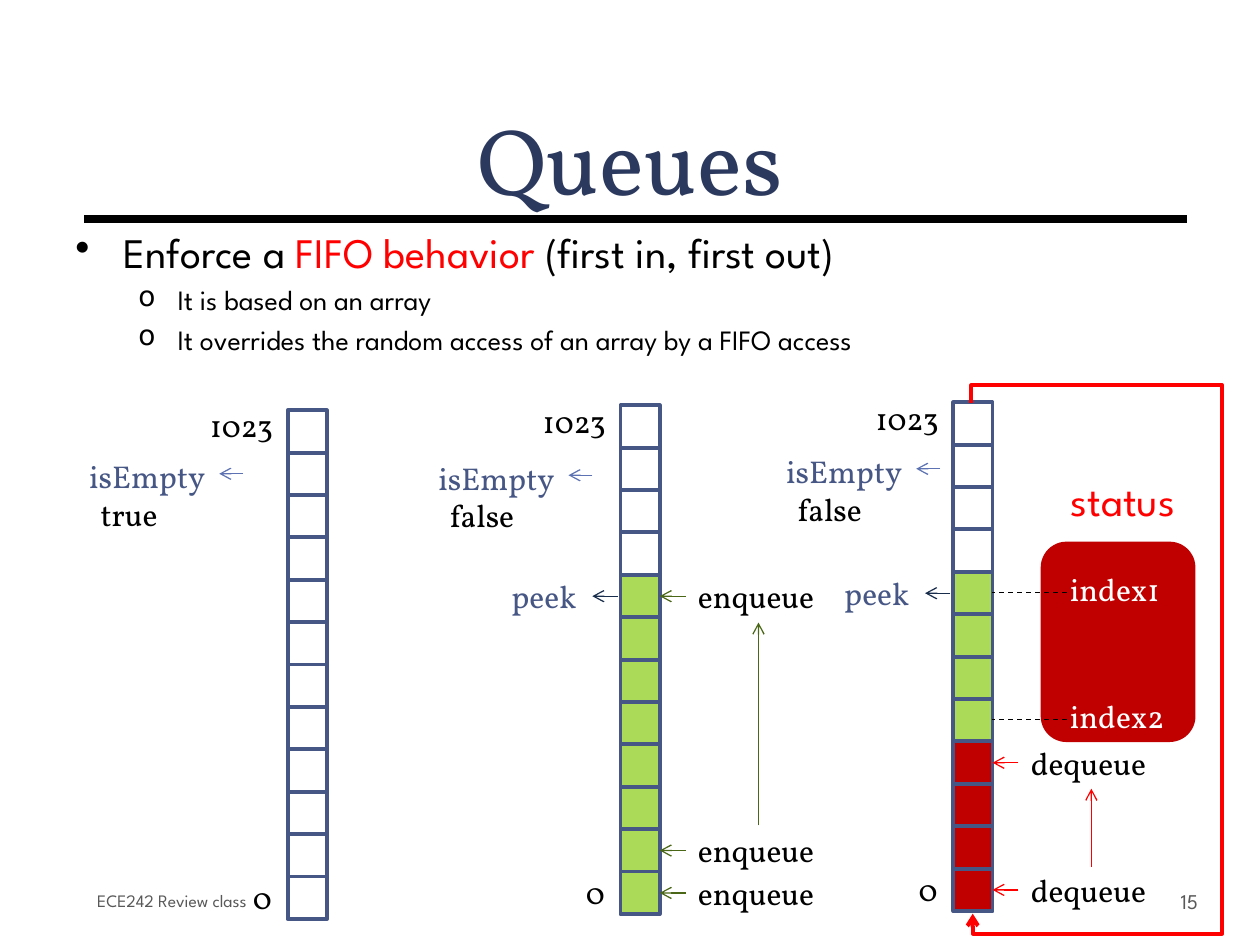
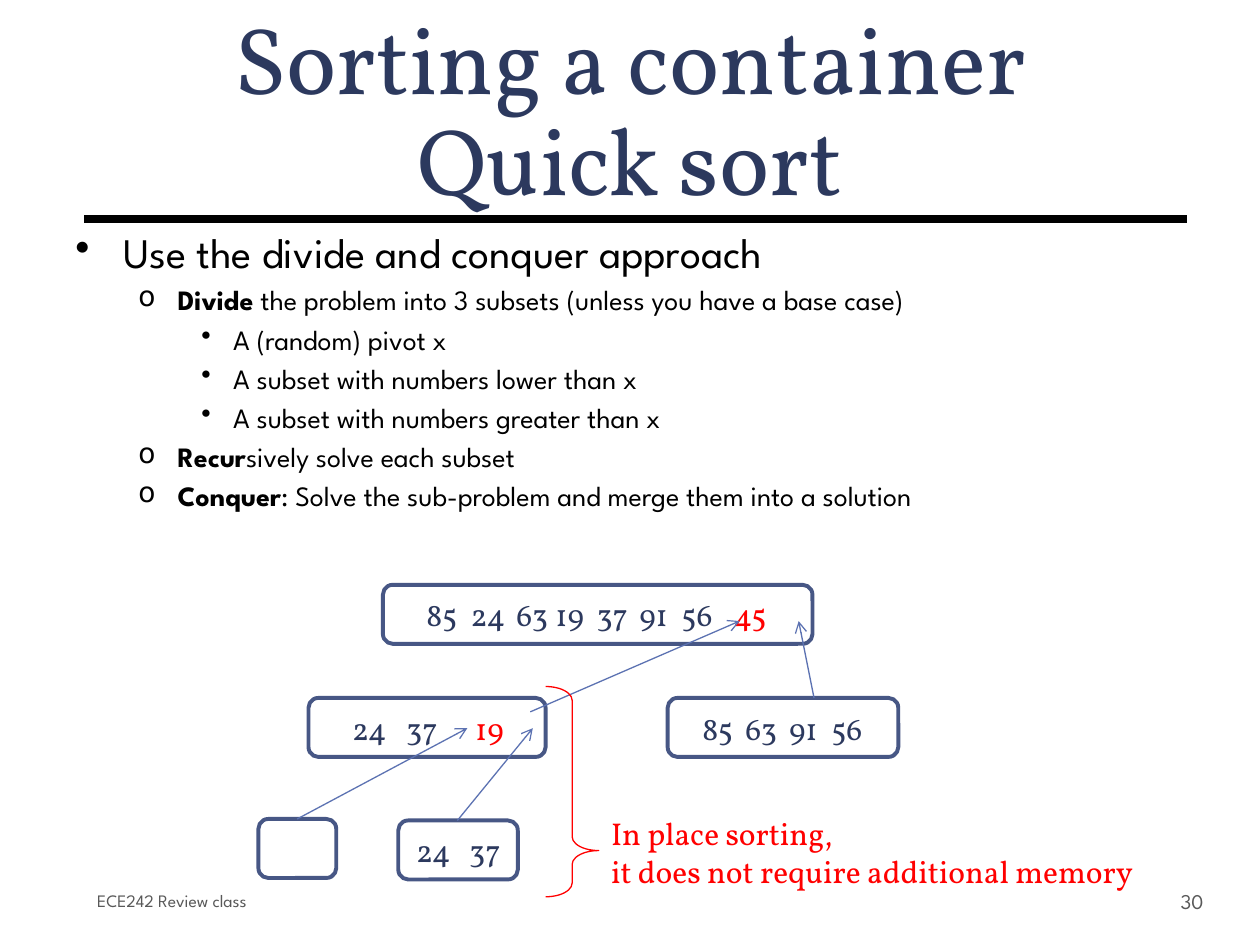
import pptx
import pptx.util
import pptx.dml.color
import pptx.enum.dml
import pptx.enum.shapes
import pptx.enum.text
import pptx.oxml.ns
import lxml.etree

Cm = pptx.util.Cm
Pt = pptx.util.Pt
KIND = pptx.enum.shapes.MSO_SHAPE
ANCHOR = pptx.enum.text.MSO_ANCHOR
FIT = pptx.enum.text.MSO_AUTO_SIZE

SERIF, SANS = "Vollkorn", "League Spartan"
BLACK, WHITE, GREY = "000000", "FFFFFF", "595959"
NAVY, BLUE, SKY, DARK = "2C395E", "475785", "5C72B2", "182C4B"
RED, WINE, GREEN, OLIVE = "FF0000", "C00000", "ABD958", "4A6717"

# Bullet levels: left indent, hanging indent, sign, text size
LEVELS = [(0.97, 0.97, "•", 24), (2.06, 0.79, "o", 16), (3.18, 0.64, "•", 16)]

# Queue columns: cell size and the span from first to last row
CELL_W, CELL_H, SPAN, ROWS = 0.79, 0.86, 9.4, 12


def color(code):
    return pptx.dml.color.RGBColor.from_string(code)


def child(node, tag, **attrs):
    return lxml.etree.SubElement(node, pptx.oxml.ns.qn(tag), attrs)


def row_y(top, row):
    return top + row * SPAN / (ROWS - 1)


class Deck:
    def __init__(self):
        self.prs = pptx.Presentation()
        self.prs.slide_width, self.prs.slide_height = Cm(25.4), Cm(19.05)
        self.slide = None

    def start(self, title, number):
        """Add a slide with the shared title, rule and footer."""
        self.slide = self.prs.slides.add_slide(self.prs.slide_layouts[5])
        self.line(1.7, 4.42, 23.93, 4.42, BLACK, 4.5, head=False)
        box = self.slide.shapes.title
        box.left, box.top, box.width, box.height = Cm(1.27), Cm(0), Cm(22.86), Cm(4.45)
        frame = box.text_frame
        frame.text = title
        frame.auto_size = FIT.NONE
        frame.vertical_anchor = ANCHOR.BOTTOM
        para = frame.paragraphs[0]
        para.alignment = pptx.enum.text.PP_ALIGN.CENTER
        para.line_spacing = Pt(58)
        for run in para.runs:
            self.style(run, 54, SERIF, NAVY)
        self.foot(23.72, 1.55, 0.08, str(number), 12)
        self.foot(1.83, 7.9, 0.13, "ECE242 Review class", 10)

    def foot(self, x, wide, inset, words, size):
        frame = self.text(x, 17.65, wide, 1.02, [[words]], size, SANS, GREY, wrap=True)
        frame.auto_size = FIT.NONE
        frame.vertical_anchor = ANCHOR.MIDDLE
        frame.margin_left = Cm(inset)

    def style(self, run, size, face, hue, bold=False):
        font = run.font
        font.size, font.name, font.bold = Pt(size), face, bold
        font.color.rgb = color(hue)

    def fill(self, para, parts, size, face, hue):
        """Write parts: plain strings or (string, colour, bold)."""
        for part in parts:
            words, tint, bold = (part, hue, False) if isinstance(part, str) else part
            run = para.add_run()
            run.text = words
            self.style(run, size, face, tint, bold)

    def text(self, x, y, wide, high, lines, size=18, face=SERIF, hue=BLACK, wrap=False):
        box = self.slide.shapes.add_textbox(Cm(x), Cm(y), Cm(wide), Cm(high))
        frame = box.text_frame
        frame.word_wrap = wrap
        frame.auto_size = FIT.SHAPE_TO_FIT_TEXT
        for i, parts in enumerate(lines):
            para = frame.add_paragraph() if i else frame.paragraphs[0]
            self.fill(para, parts, size, face, hue)
        return frame

    def bullets(self, items):
        frame = self.text(1.27, 4.45, 22.86, 12.57, [], wrap=True)
        frame.auto_size = FIT.NONE
        for i, (level, *parts) in enumerate(items):
            left, hang, sign, size = LEVELS[level]
            para = frame.add_paragraph() if i else frame.paragraphs[0]
            para.level = level
            props = para._p.get_or_add_pPr()
            props.set("marL", str(Cm(left)))
            props.set("indent", str(-Cm(hang)))
            child(child(props, "a:spcBef"), "a:spcPct", val="20000")
            child(props, "a:buChar", char=sign)
            self.fill(para, parts, size, SANS, BLACK)

    def shape(self, kind, x, y, wide, high, fill=None, edge=None, weight=2.25):
        item = self.slide.shapes.add_shape(kind, Cm(x), Cm(y), Cm(wide), Cm(high))
        self.paint(item, fill, edge, weight)
        return item

    def paint(self, item, fill, edge, weight):
        item.shadow.inherit = False
        if fill:
            item.fill.solid()
            item.fill.fore_color.rgb = color(fill)
        else:
            item.fill.background()
        if edge:
            item.line.color.rgb = color(edge)
            item.line.width = Pt(weight)
        else:
            item.line.fill.background()

    def tip(self, item):
        child(item.line._get_or_add_ln(), "a:tailEnd", type="arrow")

    def line(self, x1, y1, x2, y2, hue, weight=0.75, head=True, dash=False):
        item = self.slide.shapes.add_connector(
            pptx.enum.shapes.MSO_CONNECTOR.STRAIGHT, Cm(x1), Cm(y1), Cm(x2), Cm(y2))
        item.line.color.rgb = color(hue)
        item.line.width = Pt(weight)
        if dash:
            item.line.dash_style = pptx.enum.dml.MSO_LINE.DASH
        if head:
            self.tip(item)
        child(item._element.spPr, "a:effectLst")

    def route(self, points, hue):
        """Draw an open path that ends in an arrow."""
        spots = [(Cm(x), Cm(y)) for x, y in points]
        path = self.slide.shapes.build_freeform(*spots[0])
        path.add_line_segments(spots[1:], close=False)
        item = path.convert_to_shape()
        self.paint(item, None, hue, 2.25)
        self.tip(item)

    def column(self, x, y, fills):
        for row, fill in enumerate(fills):
            self.shape(KIND.RECTANGLE, x, row_y(y, row), CELL_W, CELL_H, fill, BLUE)
        self.text(x - 0.95, y + 9.31, 0.84, 1.02, [["0"]])
        self.text(x - 1.82, y - 0.2, 1.8, 1.02, [["1023"]])

    def entry(self, x, top, row, word, hue):
        """Label a cell from the right."""
        y = row_y(top, row)
        self.text(x + 1.31, y - 0.08, 2.95, 1.02, [[word]])
        self.line(x + 1.31, y + CELL_H / 2, x + CELL_W, y + CELL_H / 2, hue)

    def peek(self, x, top, row):
        y = row_y(top, row)
        self.text(x - 2.45, y - 0.08, 1.88, 1.02, [["peek"]], hue=BLUE)
        self.line(x - 0.06, y + CELL_H / 2, x - 0.57, y + CELL_H / 2, DARK)

    def empty(self, x, y, value):
        frame = self.text(x, y, 2.87, 1.8, [[("isEmpty", BLUE, False)], [value]])
        frame.paragraphs[1]._p.get_or_add_pPr().set("marL", str(Cm(0.23)))
        self.line(x + 3.35, y + 0.46, x + 2.87, y + 0.46, SKY)

    def numbers(self, x, y, wide, inset=0, stops=(), parts=()):
        """Draw a rounded box with numbers set on tab stops."""
        box = self.shape(KIND.ROUNDED_RECTANGLE, x, y, wide, 1.19, WHITE, BLUE)
        if not parts:
            return
        frame = box.text_frame
        frame.word_wrap = False
        frame.vertical_anchor = ANCHOR.MIDDLE
        frame.margin_left, frame.margin_right = Cm(inset), Cm(0)
        para = frame.paragraphs[0]
        para.alignment = pptx.enum.text.PP_ALIGN.LEFT
        tabs = child(para._p.get_or_add_pPr(), "a:tabLst")
        for stop in stops:
            child(tabs, "a:tab", pos=str(Cm(stop)), algn="l")
        self.fill(para, parts, 18, SERIF, NAVY)


def queues(deck):
    deck.start("Queues", 15)
    deck.bullets([
        (0, "Enforce a ", ("FIFO behavior ", RED, False), "(first in, first out)"),
        (1, "It is based on an array"),
        (1, "It overrides the random access of an array by a FIFO access"),
    ])

    # Three states of the array
    first, second, third = [(5.8, 8.27), (12.51, 8.17), (19.22, 8.11)]
    deck.column(*first, [WHITE] * 12)
    deck.column(*second, [WHITE] * 4 + [GREEN] * 8)
    deck.column(*third, [WHITE] * 4 + [GREEN] * 4 + [WINE] * 4)

    # Operations beside the cells
    for row in (4, 10, 11):
        deck.entry(*second, row, "enqueue", OLIVE)
    for row in (8, 11):
        deck.entry(*third, row, "dequeue", RED)
    for spot in (second, third):
        deck.peek(*spot, 4)
    deck.line(15.29, 16.64, 15.29, 12.55, OLIVE)
    deck.line(22, 17.48, 22, 15.9, RED)
    for x, y, value in [(1.55, 9.09, "true"), (8.59, 9.12, "false"), (15.6, 8.99, "false")]:
        deck.empty(x, y, value)

    # Status and its two indexes
    deck.shape(KIND.ROUNDED_RECTANGLE, 20.98, 10.92, 3.12, 4.04, WINE)
    for y, word in [(11.94, "index1"), (14.5, "index2")]:
        deck.line(21.51, y, 19.99, y, BLACK, head=False, dash=True)
        deck.text(21.32, y - 0.58, 2.41, 1.02, [[word]], hue=WHITE)
    deck.text(21.34, 9.45, 2.87, 1.27, [["status"]], 24, SANS, RED)

    # Wrap from the last cell to the first
    deck.route([(19.58, 8.13), (19.58, 7.77), (24.64, 7.77), (24.64, 18.82),
                (19.61, 18.82), (19.61, 18.42)], RED)


def sorting(deck):
    deck.start("Sorting a container\vQuick sort", 30)
    deck.bullets([
        (0, "Use the divide and conquer approach"),
        (1, ("Divide", BLACK, True), " the problem into 3 subsets (unless you have a base case)"),
        (2, "A (random) pivot x"),
        (2, "A subset with numbers lower than x"),
        (2, "A subset with numbers greater than x"),
        (1, ("Recur", BLACK, True), "sively solve each subset"),
        (1, ("Conquer", BLACK, True), ": Solve the sub-problem and merge them into a solution"),
    ])

    # Tree of subsets
    deck.numbers(7.72, 11.79, 8.66, 0.82, (0.89, 1.81, 2.6, 3.43, 4.29, 5.14, 6.19),
                 ["85\t24\t63\t19\t37\t91\t56\t", ("45", RED, False)])
    deck.numbers(6.22, 14.07, 4.78, 0.82, (1.09, 2.48), ["24\t37\t", ("19", RED, False)])
    deck.numbers(13.46, 14.07, 4.65, 0.64, (0.87, 1.75, 2.6), ["85\t63\t91\t56"])
    deck.numbers(5.21, 16.51, 1.57)
    deck.numbers(8.03, 16.54, 2.41, 0.3, (1.07,), ["24\t37"])
    for ends in [(5.99, 16.51, 9.42, 14.68), (9.22, 16.54, 10.74, 14.68),
                 (10.69, 14.35, 14.91, 12.52), (16.41, 14.07, 16.1, 12.52)]:
        deck.line(*ends, SKY)

    # Remark on memory
    brace = deck.shape(KIND.RIGHT_BRACE, 11, 13.84, 1.07, 4.24, None, RED, 0.75)
    brace.adjustments[0], brace.adjustments[1] = 0.26, 0.78
    deck.text(12.07, 16.28, 11.89, 1.8,
              [["In place sorting,"], ["it does not require additional memory"]],
              hue=RED, wrap=True)


def main():
    deck = Deck()
    queues(deck)
    sorting(deck)
    deck.prs.save("out.pptx")


if __name__ == "__main__":
    main()
